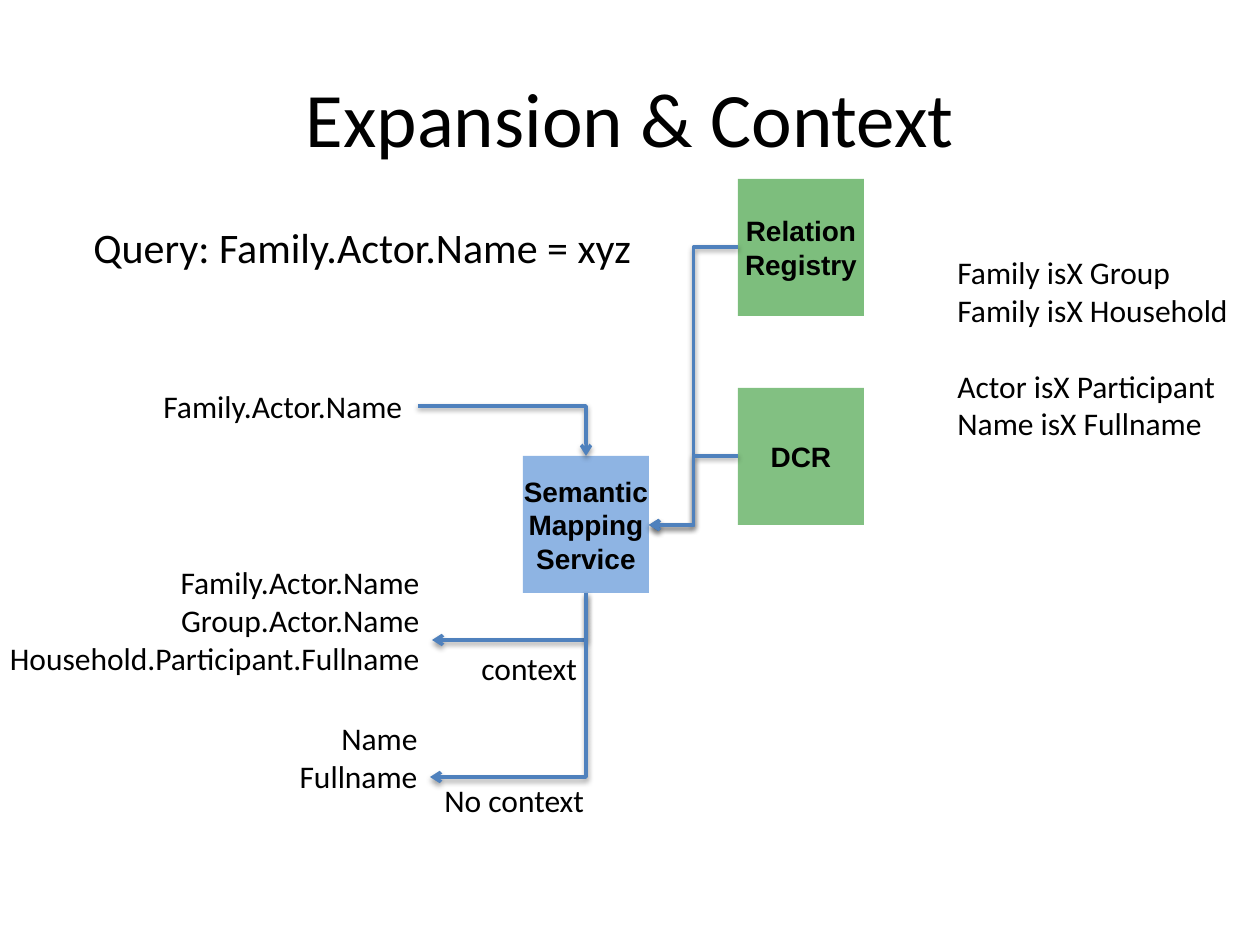
import pptx
import pptx.util
import pptx.dml.color
import pptx.enum.shapes
import pptx.enum.text
import pptx.oxml
import pptx.oxml.ns

ALIGN = pptx.enum.text.PP_ALIGN
ANCHOR = pptx.enum.text.MSO_ANCHOR
qn = pptx.oxml.ns.qn
HUES = {"ink": "000000", "blue": "8EB4E3", "green": "008000", "line": "4F81BD"}
SHADOW = (
    f'<a:effectLst {pptx.oxml.ns.nsdecls("a")}>'
    '<a:outerShdw blurRad="40000" dist="20000" dir="5400000" rotWithShape="0">'
    '<a:srgbClr val="000000"><a:alpha val="38000"/></a:srgbClr>'
    "</a:outerShdw></a:effectLst>"
)


def px(count):
    return round(count * 914400 / 126)


def hue(name):
    return pptx.dml.color.RGBColor.from_string(HUES[name])


class Page:
    """Holds the text style and the slide being drawn."""

    def __init__(self, deck):
        self.slide = deck.slides.add_slide(deck.slide_layouts[5])
        self.shapes = self.slide.shapes
        self.font = "Calibri"

    def fill(self, frame, lines, size, align, gaps=(), **extra):
        """Write one paragraph a line; gaps holds the lines with a blank above."""
        look = {"name": self.font, "size": pptx.util.Pt(size), **extra}
        for i, line in enumerate(lines):
            para = frame.paragraphs[0] if i == 0 else frame.add_paragraph()
            para.alignment = align
            if i in gaps:
                para.space_before = pptx.util.Pt(size * 1.2)
            run = para.add_run()
            run.text = line
            for key, value in look.items():
                setattr(run.font, key, value)
            run.font.color.rgb = hue("ink")

    def title(self, text, x, y, w, h):
        shape = self.shapes.title
        for key, value in {"left": x, "top": y, "width": w, "height": h}.items():
            setattr(shape, key, px(value))
        shape.text_frame.vertical_anchor = ANCHOR.MIDDLE
        self.fill(shape.text_frame, [text], 44, ALIGN.CENTER)

    def text(self, lines, x, y, w, h, size=18, align=ALIGN.LEFT, gaps=()):
        frame = self.shapes.add_textbox(px(x), px(y), px(w), px(h)).text_frame
        frame.word_wrap = False
        frame.auto_size = pptx.enum.text.MSO_AUTO_SIZE.SHAPE_TO_FIT_TEXT
        self.fill(frame, lines, size, align, gaps)

    def box(self, lines, x, y, color, alpha=100):
        kind = pptx.enum.shapes.MSO_SHAPE.RECTANGLE
        shape = self.shapes.add_shape(kind, px(x), px(y), px(126), px(137))
        shape.shadow.inherit = False
        shape.line.fill.background()
        shape.fill.solid()
        shape.fill.fore_color.rgb = hue(color)
        if alpha < 100:
            tint = shape.fill._xPr.find(".//" + qn("a:srgbClr"))
            tint.makeelement(qn("a:alpha"))
            pptx.oxml.ns  # namespace helpers serve the element below
            mark = tint.makeelement(qn("a:alpha"), {"val": str(alpha * 1000)})
            tint.append(mark)
        frame = shape.text_frame
        for key, value in {"margin_left": 0, "margin_right": 0, "word_wrap": True,
                           "vertical_anchor": ANCHOR.MIDDLE}.items():
            setattr(frame, key, value)
        self.fill(frame, lines, 16, ALIGN.CENTER, name="Arial", bold=True)

    def arrow(self, x1, y1, x2, y2, corner=False):
        """Draw an elbow; a corner bends once, and leaves downward if it runs left."""
        turn = corner and x2 < x1
        if turn:
            mid_x, mid_y = (x1 + x2) / 2, (y1 + y2) / 2
            half_w, half_h = (y2 - y1) / 2, (x1 - x2) / 2
            x1, x2 = mid_x - half_w, mid_x + half_w
            y1, y2 = mid_y - half_h, mid_y + half_h
        kind = pptx.enum.shapes.MSO_CONNECTOR.ELBOW
        link = self.shapes.add_connector(kind, px(x1), px(y1), px(x2), px(y2))
        link.line.color.rgb = hue("line")
        link.line.width = pptx.util.Pt(2)
        props = link._element.spPr
        if corner:
            props.find(qn("a:prstGeom")).set("prst", "bentConnector2")
        if turn:
            props.find(qn("a:xfrm")).set("rot", "5400000")
        stroke = props.find(qn("a:ln"))
        stroke.append(stroke.makeelement(qn("a:tailEnd"), {"type": "arrow"}))
        props.append(pptx.oxml.parse_xml(SHADOW))


def main():
    deck = pptx.Presentation()
    deck.slide_width, deck.slide_height = px(1260), px(945)
    page = Page(deck)
    page.title("Expansion & Context", 63, 38, 1134, 158)

    page.box(["Semantic", "Mapping", "Service"], 523, 456, "blue")
    page.text(["Family.Actor.Name"], 151, 381, 267, 50)
    page.text(["Family.Actor.Name", "Group.Actor.Name",
               "Household.Participant.Fullname"],
              -15, 557, 447, 165, align=ALIGN.RIGHT)
    page.arrow(418, 406, 586, 456, corner=True)
    page.arrow(586, 593, 432, 640, corner=True)

    page.box(["Relation", "Registry"], 738, 179, "green", 51)
    page.box(["DCR"], 738, 388, "green", 49)
    for y in (247, 456):
        page.arrow(738, y, 649, 525)

    page.text(["Family isX Group", "Family isX Household",
               "Actor isX Participant", "Name isX Fullname"],
              945, 247, 299, 204, gaps=(2,))
    page.text(["Query: Family.Actor.Name = xyz"], 81, 215, 568, 63, size=24)
    page.text(["Name", "Fullname"], 277, 713, 153, 127, align=ALIGN.RIGHT)
    page.arrow(586, 593, 430, 777, corner=True)
    page.text(["context"], 469, 643, 122, 50)
    page.text(["No context"], 432, 775, 166, 50)
    deck.save("out.pptx")


if __name__ == "__main__":
    main()
